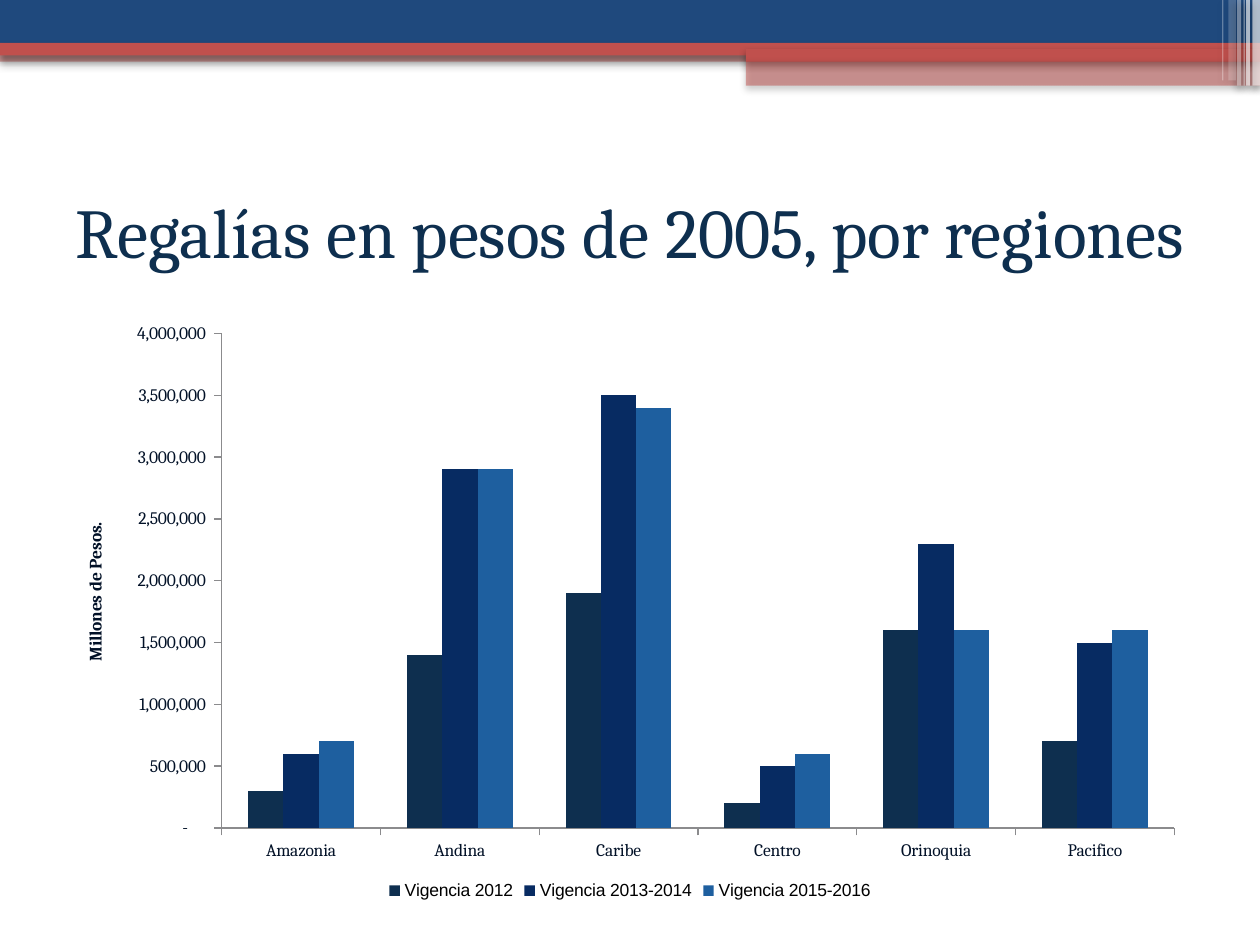
from dataclasses import dataclass

from lxml import etree
from pptx import Presentation
from pptx.chart.data import CategoryChartData
from pptx.dml.color import RGBColor
from pptx.enum.chart import XL_CHART_TYPE as ChartType
from pptx.enum.chart import XL_LEGEND_POSITION as LegendPos
from pptx.enum.chart import XL_TICK_MARK as Tick
from pptx.enum.shapes import MSO_SHAPE as Shape
from pptx.enum.text import MSO_ANCHOR as Anchor
from pptx.enum.text import PP_ALIGN as Align
from pptx.oxml import parse_xml
from pptx.oxml.ns import nsdecls, qn
from pptx.util import Pt


@dataclass(frozen=True)
class Theme:
    navy: str = "1F497D"
    red: str = "C0504D"
    white: str = "FFFFFF"
    title: str = "0E2F4F"
    axis_text: str = "021127"
    axis_line: str = "8B8B8D"
    legend: str = "000000"
    series: tuple = ("0E2F4F", "072B62", "1E5F9F")
    serif: str = "Cambria"
    sans: str = "Arial"
    title_size: int = 40
    chart_size: int = 10


THEME = Theme()

# left, top, width, height, colour, opacity in percent
BANDS = [
    (0, 28.8, 720, 6.5, THEME.red, 50),
    (0, 0, 720, 24.5, THEME.navy, 100),
    (0, 24.5, 720, 7.2, THEME.red, 100),
    (426.2, 28.1, 293.8, 7.2, THEME.red, 100),
    (426.2, 34.6, 293.8, 14.4, THEME.red, 50),
]
# left, width, height, opacity in percent
STRIPES = [
    (715.7, 4.3, 49, 66),
    (712.1, 2.2, 49, 66),
    (710.6, 0.72, 49, 60),
    (707, 2.2, 49, 40),
    (702, 4.3, 46, 20),
    (698.4, 0.72, 46, 31),
]

REGIONS = ["Amazonia", "Andina", "Caribe", "Centro", "Orinoquia", "Pacifico"]
ROYALTIES = {
    "Vigencia 2012": (300000, 1400000, 1900000, 200000, 1600000, 700000),
    "Vigencia 2013-2014": (600000, 2900000, 3500000, 500000, 2300000, 1500000),
    "Vigencia 2015-2016": (700000, 2900000, 3400000, 600000, 1600000, 1600000),
}
PESOS_FORMAT = r"_(* #,##0_);_(* \(#,##0\);_(* \-??_);_(@_)"


def set_font(font, name, size, color, bold=False):
    font.name, font.size, font.bold = name, Pt(size), bold
    font.color.rgb = RGBColor.from_string(color)


def add_bar(slide, box, color, opacity):
    """Add a borderless rectangle with a soft shadow below it."""
    sp = slide.shapes.add_shape(Shape.RECTANGLE, *map(Pt, box))
    sp.fill.solid()
    sp.fill.fore_color.rgb = RGBColor.from_string(color)
    sp.line.fill.background()
    if opacity < 100:
        clr = sp._element.spPr.find(".//" + qn("a:srgbClr"))
        etree.SubElement(clr, qn("a:alpha"), val=str(opacity * 1000))
    sp._element.spPr.append(parse_xml(
        f'<a:effectLst {nsdecls("a")}>'
        f'<a:outerShdw blurRad="{Pt(4.1)}" dist="{Pt(2)}" dir="5400000">'
        '<a:srgbClr val="000000"><a:alpha val="40000"/></a:srgbClr>'
        '</a:outerShdw></a:effectLst>'))


def add_header(slide, x, y):
    for left, top, width, height, color, opacity in BANDS:
        add_bar(slide, (x + left, y + top, width, height), color, opacity)
    for left, width, height, opacity in STRIPES:
        add_bar(slide, (x + left, y, width, height), THEME.white, opacity)


def add_title(slide, box, text):
    title = slide.shapes.title
    title.left, title.top, title.width, title.height = map(Pt, box)
    tf = title.text_frame
    tf.word_wrap = True
    tf.vertical_anchor = Anchor.MIDDLE
    p = tf.paragraphs[0]
    p.alignment = Align.LEFT
    r = p.add_run()
    r.text = text
    set_font(r.font, THEME.serif, THEME.title_size, THEME.title)


def style_axis(axis):
    axis.has_major_gridlines = False
    axis.major_tick_mark = Tick.OUTSIDE
    axis.minor_tick_mark = Tick.NONE
    axis.format.line.color.rgb = RGBColor.from_string(THEME.axis_line)
    axis.format.line.width = Pt(0.75)
    set_font(axis.tick_labels.font, THEME.serif, THEME.chart_size, THEME.axis_text)


def set_plot_layout(chart, x, y, w, h):
    """Place the inner plot area, in fractions of the chart."""
    area = chart._chartSpace.find(".//" + qn("c:plotArea"))
    old = area.find(qn("c:layout"))
    if old is not None:
        area.remove(old)
    area.insert(0, parse_xml(
        f'<c:layout {nsdecls("c")}><c:manualLayout><c:layoutTarget val="inner"/>'
        '<c:xMode val="edge"/><c:yMode val="edge"/>'
        f'<c:x val="{x}"/><c:y val="{y}"/><c:w val="{w}"/><c:h val="{h}"/>'
        '</c:manualLayout></c:layout>'))


def add_royalties_chart(slide, box):
    data = CategoryChartData(number_format="#,##0")
    data.categories = REGIONS
    for name, values in ROYALTIES.items():
        data.add_series(name, values)
    chart = slide.shapes.add_chart(
        ChartType.COLUMN_CLUSTERED, *map(Pt, box), data).chart
    chart.has_title = False
    set_font(chart.font, THEME.sans, THEME.chart_size, THEME.legend)
    chart.has_legend = True
    chart.legend.position = LegendPos.BOTTOM
    chart.legend.include_in_layout = False

    plot = chart.plots[0]
    plot.gap_width, plot.overlap = 150, 0
    plot.vary_by_categories = False
    for series, color in zip(plot.series, THEME.series):
        series.format.fill.solid()
        series.format.fill.fore_color.rgb = RGBColor.from_string(color)

    style_axis(chart.category_axis)
    axis = chart.value_axis
    style_axis(axis)
    axis.minimum_scale, axis.maximum_scale = 0, 4000000
    axis.major_unit = 500000
    axis.tick_labels.number_format = PESOS_FORMAT
    axis.tick_labels.number_format_is_linked = False
    r = axis.axis_title.text_frame.paragraphs[0].add_run()
    r.text = "Millones de Pesos."
    set_font(r.font, THEME.serif, THEME.chart_size, THEME.axis_text, bold=True)
    set_plot_layout(chart, 0.14, 0.04, 0.84, 0.83)


def main():
    prs = Presentation()
    prs.slide_width, prs.slide_height = Pt(720), Pt(540)
    slide = prs.slides.add_slide(prs.slide_layouts[5])
    add_header(slide, 0, 0)
    add_title(slide, (36, 90, 648, 84), "Regalías en pesos de 2005, por regiones")
    add_royalties_chart(slide, (36, 177, 648, 340.5))
    prs.save("out.pptx")


if __name__ == "__main__":
    main()
